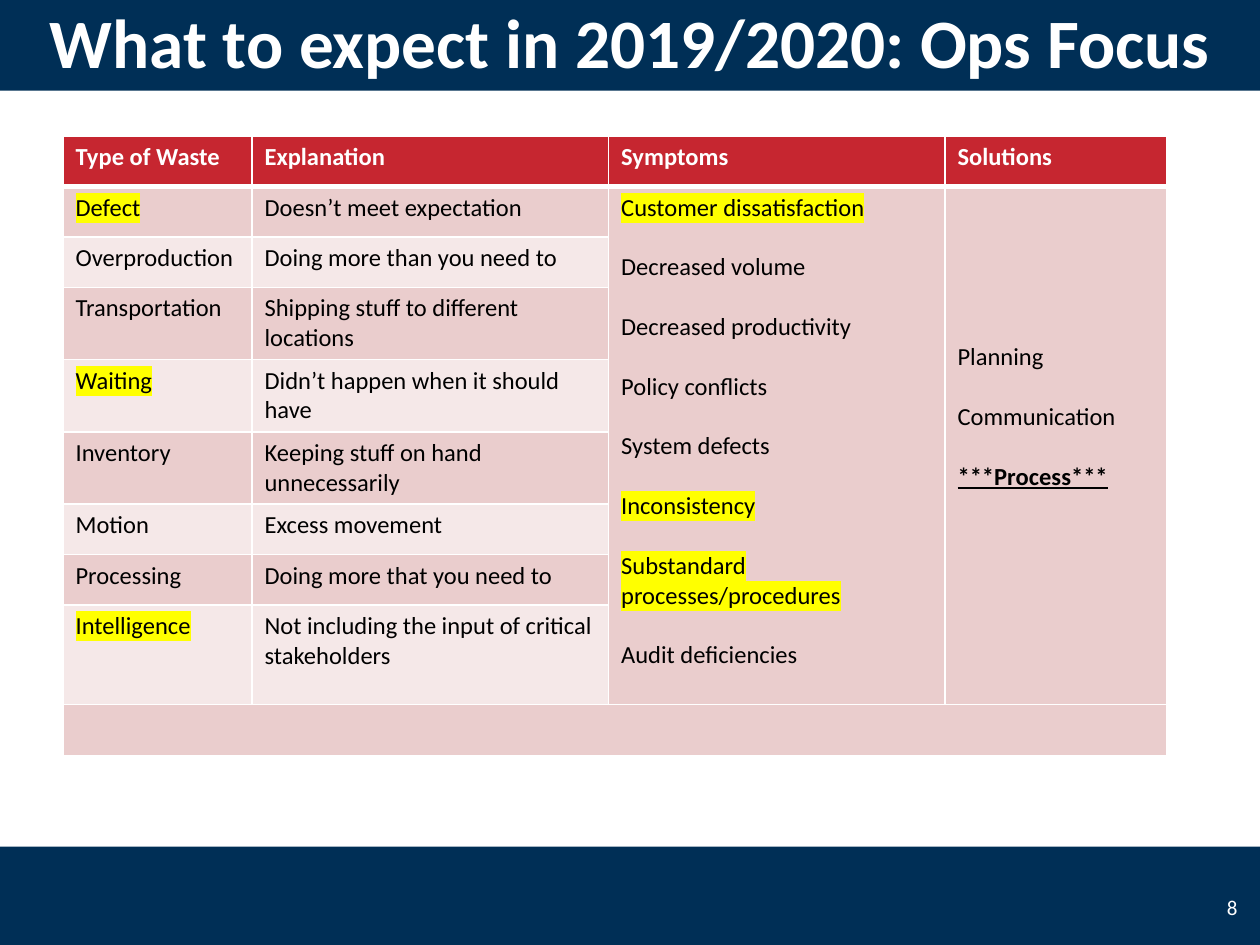
"""Build the slide on types of waste, their symptoms and solutions."""
import pptx
import pptx.dml.color
import pptx.enum.shapes
import pptx.enum.text
import pptx.oxml
import pptx.oxml.ns
import pptx.util

PP_ALIGN = pptx.enum.text.PP_ALIGN
MIDDLE = pptx.enum.text.MSO_ANCHOR.MIDDLE

COLORS = {"navy": "002F56", "red": "C62630", "pink": "EACDCD", "pale": "F5E8E8",
          "white": "FFFFFF", "black": "000000", "yellow": "FFFF00"}
HEADERS = ["Type of Waste", "Explanation", "Symptoms", "Solutions"]
WASTES = [
    ("Defect", "Doesn’t meet expectation"),
    ("Overproduction", "Doing more than you need to"),
    ("Transportation", "Shipping stuff to different locations"),
    ("Waiting", "Didn’t happen when it should have"),
    ("Inventory", "Keeping stuff on hand unnecessarily"),
    ("Motion", "Excess movement"),
    ("Processing", "Doing more that you need to"),
    ("Intelligence", "Not including the input of critical stakeholders"),
]
SYMPTOMS = ["Customer dissatisfaction", "Decreased volume", "Decreased productivity",
            "Policy conflicts", "System defects", "Inconsistency",
            "Substandard processes/procedures", "Audit deficiencies"]
SOLUTIONS = ["Planning", "Communication", "***Process***"]
HIGHLIGHTED = {"Defect", "Waiting", "Intelligence", "Customer dissatisfaction",
               "Inconsistency", "Substandard processes/procedures"}
EMPHASIZED = {"***Process***"}
COL_WIDTHS = [15, 28.3, 26.7, 17.6]
ROW_HEIGHTS = [4, 4, 4, 5.7, 5.7, 5.7, 4, 4, 7.9, 4]
LINE_GAP = 17.1


class SlideBuilder:
    """Hold the style and slide; lengths are cells of a 100 by 75 grid."""

    font = "Calibri"

    def __init__(self, prs):
        self.unit = prs.slide_width / 100
        self.slide = prs.slides.add_slide(prs.slide_layouts[5])

    def size(self, n):
        return pptx.util.Emu(round(n * self.unit))

    def box(self, *lengths):
        return [self.size(n) for n in lengths]

    def rgb(self, name):
        return pptx.dml.color.RGBColor.from_string(COLORS[name])

    def style(self, p, size, color, bold=False, align=PP_ALIGN.LEFT):
        p.alignment = align
        for r in p.runs:
            r.font.size = pptx.util.Pt(size)
            r.font.bold = bold or r.text in EMPHASIZED
            r.font.underline = r.text in EMPHASIZED
            r.font.color.rgb = self.rgb(color)
            if r.text in HIGHLIGHTED:
                self.highlight(r)
            r.font.name = self.font

    def highlight(self, r):
        r.font._element.append(pptx.oxml.parse_xml(
            f'<a:highlight {pptx.oxml.ns.nsdecls("a")}>'
            f'<a:srgbClr val="{COLORS["yellow"]}"/></a:highlight>'))

    def bar(self, top):
        sp = self.slide.shapes.add_shape(
            pptx.enum.shapes.MSO_SHAPE.RECTANGLE, *self.box(0, top, 100, 8))
        sp.shadow.inherit = False
        sp.fill.solid()
        sp.fill.fore_color.rgb = self.rgb("navy")
        sp.line.fill.background()

    def title(self, text, top):
        sp = self.slide.shapes.title
        sp.left, sp.top, sp.width, sp.height = self.box(0, top, 100, 8)
        self.slide.shapes._spTree.append(sp._element)
        tf = sp.text_frame
        tf.text = text
        tf.word_wrap = True
        tf.auto_size = pptx.enum.text.MSO_AUTO_SIZE.NONE
        tf.vertical_anchor = MIDDLE
        self.style(tf.paragraphs[0], 39.6, "white", True, PP_ALIGN.CENTER)

    def label(self, text, *place):
        tf = self.slide.shapes.add_textbox(*self.box(*place)).text_frame
        tf.text = text
        tf.word_wrap = True
        tf.vertical_anchor = MIDDLE
        self.style(tf.paragraphs[0], 12, "white", align=PP_ALIGN.RIGHT)

    def borders(self, cell, bottom):
        tcPr = cell._tc.get_or_add_tcPr()
        for side, width in (("L", 1), ("R", 1), ("T", 1), ("B", bottom)):
            tcPr.append(pptx.oxml.parse_xml(
                f'<a:ln{side} {pptx.oxml.ns.nsdecls("a")} w="{pptx.util.Pt(width)}">'
                f'<a:solidFill><a:srgbClr val="{COLORS["white"]}"/></a:solidFill>'
                f'</a:ln{side}>'))

    def cell_text(self, cell, lines, color="black", bold=False):
        cell.text_frame.text = "\n".join(lines)
        for i, p in enumerate(cell.text_frame.paragraphs):
            if i:
                p.space_before = pptx.util.Pt(LINE_GAP)
            self.style(p, 14, color, bold)

    def table(self, left, top):
        place = self.box(left, top, sum(COL_WIDTHS), sum(ROW_HEIGHTS))
        rows, cols = len(ROW_HEIGHTS), len(COL_WIDTHS)
        table = self.slide.shapes.add_table(rows, cols, *place).table
        for col, width in zip(table.columns, COL_WIDTHS):
            col.width = self.size(width)
        for i, height in enumerate(ROW_HEIGHTS):
            table.rows[i].height = self.size(height)
            for j in range(cols):
                cell = table.cell(i, j)
                self.borders(cell, 1 if i else 3)
                cell.fill.solid()
                fill = "red" if i == 0 else "pink" if i % 2 else "pale"
                cell.fill.fore_color.rgb = self.rgb(fill)
        last = rows - 1
        for j in (2, 3):
            table.cell(1, j).merge(table.cell(last - 1, j))
        table.cell(last, 0).merge(table.cell(last, cols - 1))
        for j, header in enumerate(HEADERS):
            self.cell_text(table.cell(0, j), [header], "white", True)
        for i, waste in enumerate(WASTES, 1):
            for j, text in enumerate(waste):
                self.cell_text(table.cell(i, j), [text])
        self.cell_text(table.cell(1, 2), SYMPTOMS)
        self.cell_text(table.cell(1, 3), SOLUTIONS)
        table.cell(1, 3).margin_top = self.size(12.4)


def main():
    prs = pptx.Presentation()
    prs.slide_width = pptx.util.Inches(10)
    prs.slide_height = pptx.util.Inches(7.5)
    s = SlideBuilder(prs)
    s.bar(67.2)
    s.bar(-0.8)
    s.table(5, 10.8)
    s.label("8", 95, 70, 4.2, 4)
    s.title("What to expect in 2019/2020: Ops Focus", -0.8)
    prs.save("out.pptx")


if __name__ == "__main__":
    main()
